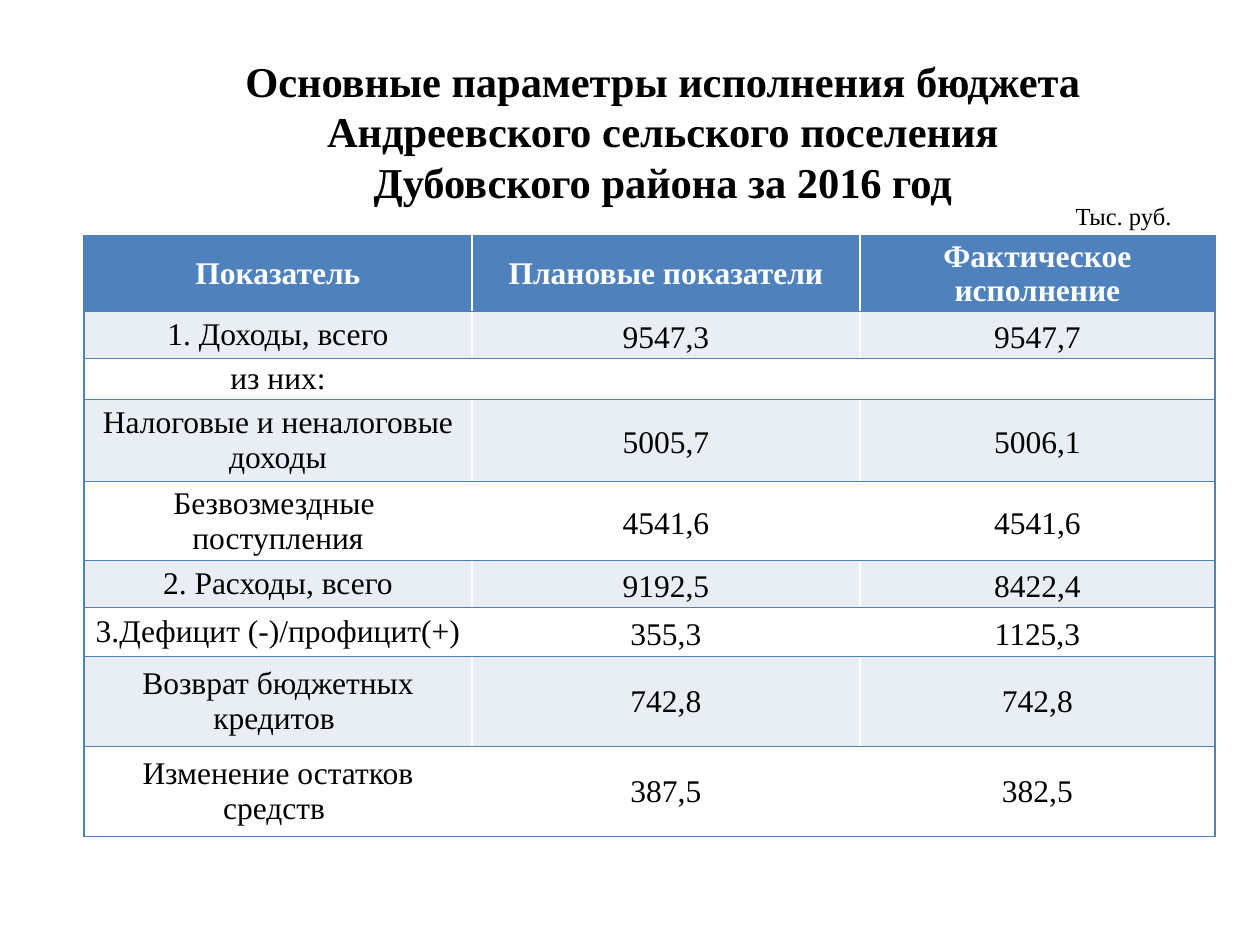
from lxml.etree import SubElement
from pptx import Presentation
from pptx.dml.color import RGBColor
from pptx.enum.text import MSO_ANCHOR as Anchor, PP_ALIGN as Align
from pptx.oxml.ns import qn
from pptx.util import Pt

PX = 914400 // 126
FONT = "Times New Roman"
BLUE, PALE, WHITE, BLACK = "4F81BD", "E9EDF4", "FFFFFF", "000000"

TITLE = [
    "Основные параметры исполнения бюджета",
    "Андреевского сельского поселения",
    "Дубовского района за 2016 год",
]
UNIT = "Тыс. руб."
ROWS = [
    ("Показатель", "Плановые показатели", "Фактическое исполнение"),
    ("1. Доходы, всего", "9547,3", "9547,7"),
    ("из них:", "", ""),
    ("Налоговые и неналоговые доходы", "5005,7", "5006,1"),
    ("Безвозмездные \nпоступления", "4541,6", "4541,6"),
    ("2. Расходы, всего", "9192,5", "8422,4"),
    ("3.Дефицит (-)/профицит(+)", "355,3", "1125,3"),
    ("Возврат бюджетных кредитов ", "742,8", "742,8"),
    ("Изменение остатков средств ", "387,5", "382,5"),
]
COLUMN_WIDTHS = [388, 388, 355]
ROW_HEIGHTS = [75, 47, 41, 82, 79, 47, 49, 90, 90]
FIRST_PADDED_ROW = 7


def px(*lengths):
    return [length * PX for length in lengths]


def rgb(color):
    return RGBColor.from_string(color)


def write(frame, text, size, color=BLACK, bold=False, align=Align.CENTER, spacing=None):
    frame.text = text
    frame.word_wrap = True
    for para in frame.paragraphs:
        para.alignment = align
        para.line_spacing = spacing
        for span in para.runs:
            span.font.name = FONT
            span.font.size = Pt(size)
            span.font.bold = bold
            span.font.color.rgb = rgb(color)


def add_borders(cell, sides):
    """Draw 1 pt lines, placed before the fill as the schema requires."""
    properties = cell._tc.get_or_add_tcPr()
    for index, side in enumerate(sides):
        line = SubElement(properties, qn(f"a:ln{side}"), w=str(Pt(1)))
        fill = SubElement(line, qn("a:solidFill"))
        SubElement(fill, qn("a:srgbClr"), val=BLUE)
        properties.insert(index, line)


def add_budget_table(slide):
    frame = slide.shapes.add_table(
        len(ROWS), len(COLUMN_WIDTHS),
        *px(84, 236, sum(COLUMN_WIDTHS), sum(ROW_HEIGHTS)))
    table = frame.table
    for column, width in zip(table.columns, COLUMN_WIDTHS):
        column.width = width * PX
    for r, (values, height) in enumerate(zip(ROWS, ROW_HEIGHTS)):
        table.rows[r].height = height * PX
        header, padded = r == 0, r >= FIRST_PADDED_ROW
        for c, value in enumerate(values):
            cell = table.cell(r, c)
            loose = c > 0 and not header and not padded
            write(cell.text_frame, value, 18, WHITE if header else BLACK,
                  bold=header, spacing=1.15 if loose and value else None)
            cell.vertical_anchor = Anchor.MIDDLE
            if not padded:
                cell.margin_left = cell.margin_right = 0
                cell.margin_top = cell.margin_bottom = 0
            cell.fill.solid()
            cell.fill.fore_color.rgb = rgb(BLUE if header else PALE if r % 2 else WHITE)
            outer = {0: "L", len(values) - 1: "R"}.get(c, "")
            add_borders(cell, outer + "TB")


deck = Presentation()
deck.slide_width, deck.slide_height = px(1260, 945)
slide = deck.slides.add_slide(deck.slide_layouts[6])

title = slide.shapes.add_textbox(*px(77, 42, 1172, 178)).text_frame
write(title, "\n".join(TITLE), 24.3, bold=True, spacing=Pt(29.1))
title.vertical_anchor = Anchor.MIDDLE

add_budget_table(slide)

unit = slide.shapes.add_textbox(*px(907, 195, 277, 43)).text_frame
write(unit, UNIT, 14, align=Align.RIGHT)

deck.save("out.pptx")
